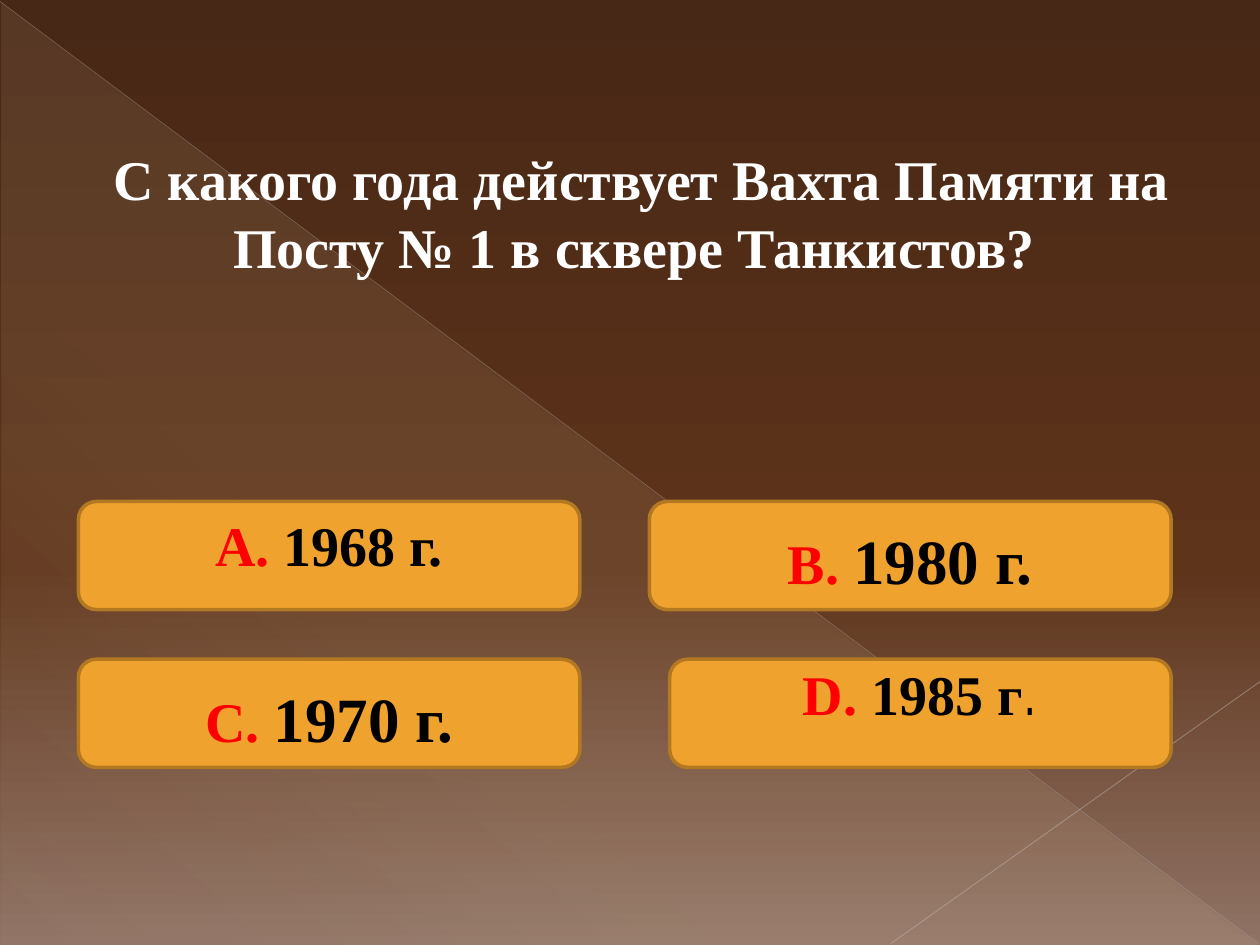
from dataclasses import dataclass

from lxml import etree
from pptx import Presentation
from pptx import util as u
from pptx.dml.color import RGBColor
from pptx.enum import shapes, text
from pptx.oxml.ns import qn


@dataclass(frozen=True)
class Theme:
    backdrop: tuple = ((0, "472715", 100), (60, "5E341B", 100), (100, "907365", 100))
    sheen: tuple = ((0, "FBEEC9", 10), (70, "FBEEC9", 8), (100, "FBEEC9", 1))
    long_ray: str = "BCB7B4"
    short_ray: str = "C4BFBD"
    button: str = "F0A22E"
    button_edge: str = "B27822"
    question: str = "FFFFFF"
    letter: str = "FF0000"
    year: str = "000000"
    serif: str = "Times New Roman"
    sans: str = "TeX Gyre Adventor"
    normal: int = 32
    large: int = 36


THEME = Theme()


def add_alpha(color, percent):
    etree.SubElement(color, qn("a:alpha"), val=str(percent * 1000))


def set_gradient(fill, owner, stops, angle):
    fill.gradient()
    gradient = owner.xpath(".//a:gradFill")[0]
    stop_list = gradient.find(qn("a:gsLst"))
    for old in list(stop_list):
        stop_list.remove(old)
    for position, rgb, opacity in stops:
        stop = etree.SubElement(stop_list, qn("a:gs"), pos=str(position * 1000))
        color = etree.SubElement(stop, qn("a:srgbClr"), val=rgb)
        if opacity < 100:
            add_alpha(color, opacity)
    gradient.find(qn("a:lin")).set("ang", str(angle * 60000))


def add_run(paragraph, words, rgb, size, name=THEME.serif, bold=True):
    run = paragraph.add_run()
    run.text = words
    run.font.color.rgb = RGBColor.from_string(rgb)
    for key, value in {"name": name, "size": u.Pt(size), "bold": bold}.items():
        setattr(run.font, key, value)


def prepare_text(frame, top_inset):
    layout = {
        "word_wrap": True,
        "vertical_anchor": text.MSO_ANCHOR.TOP,
        "margin_top": u.Cm(top_inset),
        "margin_bottom": 0,
    }
    for key, value in layout.items():
        setattr(frame, key, value)
    paragraph = frame.paragraphs[0]
    paragraph.alignment = text.PP_ALIGN.CENTER
    return paragraph


def draw_ray(slide, start, end, rgb, width, opacity):
    ray = slide.shapes.add_connector(
        shapes.MSO_CONNECTOR.STRAIGHT, *(u.Cm(value) for value in start + end)
    )
    ray.line.width = u.Pt(width)
    ray.line.color.rgb = RGBColor.from_string(rgb)
    add_alpha(ray.element.xpath(".//a:ln//a:srgbClr")[0], opacity)
    etree.SubElement(ray.element.spPr, qn("a:effectLst"))


def draw_backdrop(slide, left, top, width, height):
    set_gradient(slide.background.fill, slide.element, THEME.backdrop, 90)
    sheen = slide.shapes.add_shape(
        shapes.MSO_SHAPE.RIGHT_TRIANGLE,
        u.Cm(left + 0.03), u.Cm(top + 0.05), u.Cm(width - 0.05), u.Cm(height - 0.05),
    )
    sheen.shadow.inherit = False
    sheen.line.fill.background()
    set_gradient(sheen.fill, sheen.element, THEME.sheen, 133)
    right, bottom = left + width, top + height - 0.03
    draw_ray(slide, (left, top + 0.03), (right - 0.03, bottom), THEME.long_ray, 0.39, 35)
    draw_ray(slide, (right, top + 13.74), (left + 17.96, bottom), THEME.short_ray, 0.47, 45)


def draw_question(slide, left, top, width, height, words):
    question = slide.shapes.add_textbox(u.Cm(left), u.Cm(top), u.Cm(width), u.Cm(height))
    paragraph = prepare_text(question.text_frame, 0.28)
    add_run(paragraph, words, THEME.question, THEME.normal)


def draw_answer(slide, left, top, width, height, top_inset, runs):
    button = slide.shapes.add_shape(
        shapes.MSO_SHAPE.FLOWCHART_ALTERNATE_PROCESS,
        u.Cm(left), u.Cm(top), u.Cm(width), u.Cm(height),
    )
    button.shadow.inherit = False
    button.fill.solid()
    button.fill.fore_color.rgb = RGBColor.from_string(THEME.button)
    button.line.color.rgb = RGBColor.from_string(THEME.button_edge)
    button.line.width = u.Pt(2)
    paragraph = prepare_text(button.text_frame, top_inset)
    for run in runs:
        add_run(paragraph, *run)


def draw_answers(slide, left, top, width, height):
    button_width, button_height = 10.11, 2.18
    wide_button = 10.52
    right, lower = left + width, top + height - button_height
    letter = (THEME.letter, THEME.normal)
    year = (THEME.year, THEME.normal)
    large_year = (THEME.year, THEME.large)
    answers = (
        (left, top, button_width, 0.07, (("А. ", *letter), ("1968 г.", *year))),
        (right - wide_button, top, wide_button, 0.3,
         (("В. ", *letter), ("1980 г.", *large_year))),
        (left, lower, button_width, 0.3, (("С. ", *letter), ("1970 г.", *large_year))),
        (right - button_width, lower, button_width, -0.1,
         (("D. ", *letter), ("1985 г", *year), (".", *year, THEME.sans, False))),
    )
    for x, y, answer_width, inset, runs in answers:
        draw_answer(slide, x, y, answer_width, button_height, inset, runs)


def main():
    deck = Presentation()
    deck.slide_width, deck.slide_height = u.Cm(25.4), u.Cm(19.05)
    slide = deck.slides.add_slide(deck.slide_layouts[6])
    draw_backdrop(slide, 0, 0, 25.4, 19.05)
    draw_answers(slide, 1.58, 10.11, 22.03, 5.36)
    draw_question(
        slide, 0.79, 2.64, 24, 4.37,
        " С какого года действует Вахта Памяти на Посту № 1 в сквере Танкистов?",
    )
    deck.save("out.pptx")


if __name__ == "__main__":
    main()
